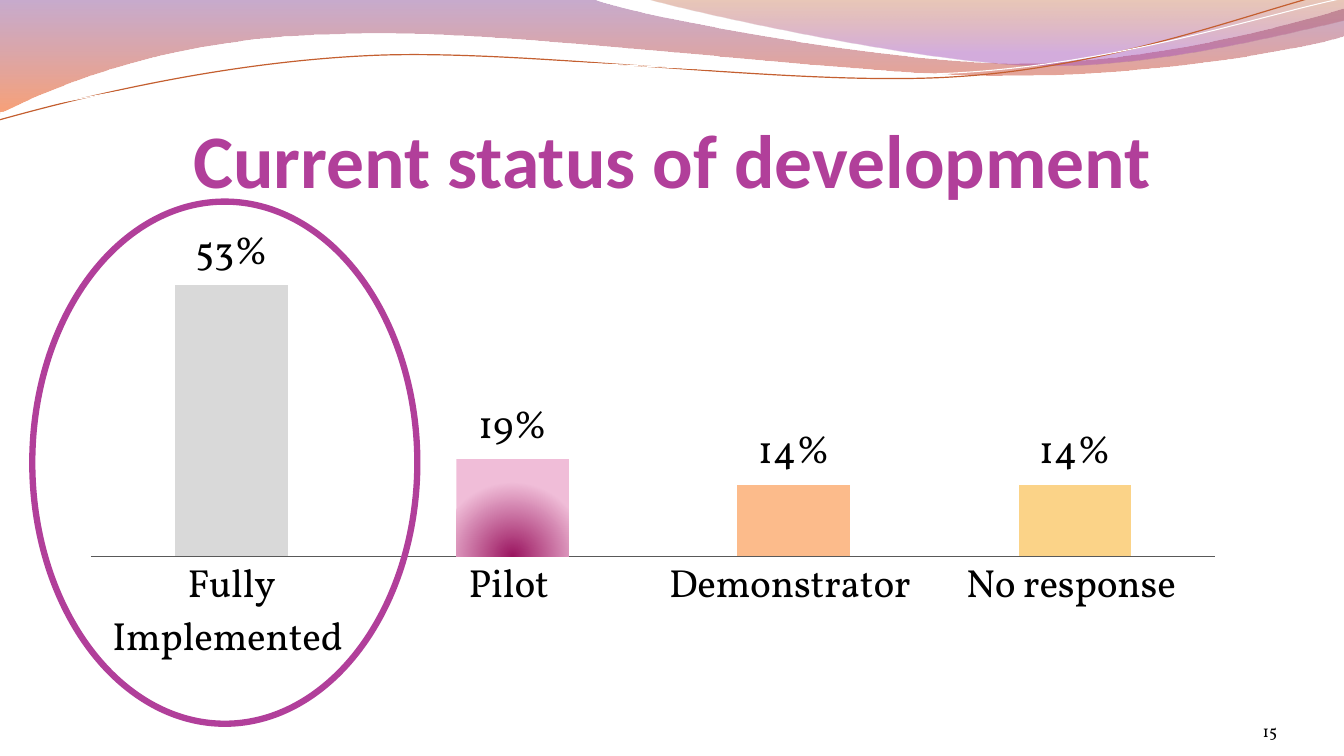
from lxml import etree
from pptx import Presentation
from pptx.chart.data import CategoryChartData
from pptx.dml.color import RGBColor as RGB
from pptx.enum.chart import XL_CHART_TYPE as CT, XL_LABEL_POSITION as LP, XL_TICK_LABEL_POSITION as TLP, XL_TICK_MARK as TM
from pptx.enum.shapes import MSO_SHAPE as SHAPE
from pptx.enum.text import MSO_ANCHOR as ANCHOR, PP_ALIGN as ALIGN
from pptx.oxml import parse_xml
from pptx.oxml.ns import qn
from pptx.util import Inches, Pt

COLS, ROWS = 40 / 3, 7.5
COLORS = {
    "plum": "B13F9A", "black": "000000", "white": "FFFFFF", "axis": "595959",
    "violet": "834591", "orange": "F35307", "rust": "B74915", "lilac": "A14BB4",
    "copper": "C45F30", "gray": "D9D9D9", "berry": "9B1560", "pink": "F0BDD8",
    "peach": "FCBB8B", "sand": "FBD388",
}
A_NS = "http://schemas.openxmlformats.org/drawingml/2006/main"
C_NS = "http://schemas.openxmlformats.org/drawingml/2006/chart"
DOWN = '<a:lin ang="5400000" scaled="0"/>'
FROM_BOTTOM = '<a:path path="circle"><a:fillToRect l="50000" t="100000" r="50000"/></a:path>'

WAVE_LEFT = [
    (0, 0), (5.87, -0.01), (6.34, 0.17, 8.85, 0.63, 10.11, 0.63),
    (11.38, 0.63, 12.78, 0.26, 13.33, 0.09), (13.35, 0.36),
    (13.11, 0.44, 11.6, 0.76, 9.94, 0.75), (8.29, 0.75, 5.09, 0.28, 3.43, 0.34),
    (1.72, 0.36, 0.61, 0.83, -0.01, 1.13),
]
WAVE_RIGHT = [
    (6.39, -0.01), (6.79, 0.11, 9.09, 0.62, 10.25, 0.65),
    (11.41, 0.69, 12.82, 0.32, 13.33, 0.21), (13.33, 0),
]
COPPER_LINE = [
    (-0.01, 1.19), (0.64, 1.01, 2.11, 0.62, 3.69, 0.55),
    (5.27, 0.48, 7.9, 0.87, 9.5, 0.76), (11.1, 0.66, 12.52, 0.08, 13.31, -0.1),
]
WHITE_LINE = [
    (0, 1.12), (0.63, 1.03, 2.18, 0.66, 3.78, 0.59),
    (5.37, 0.53, 7.96, 0.82, 9.55, 0.72), (11.15, 0.62, 12.55, 0.14, 13.34, -0.02),
]


def rgb(name):
    """Return the named colour."""
    return RGB.from_string(COLORS[name])


def set_gradient(spPr, stops, shading):
    """Give shape properties a gradient of (position, colour, opacity) stops."""
    for tag in ("a:solidFill", "a:gradFill", "a:noFill"):
        for old in spPr.findall(qn(tag)):
            spPr.remove(old)
    gs = "".join(
        f'<a:gs pos="{pos * 1000}"><a:srgbClr val="{COLORS[c]}">'
        f'<a:alpha val="{alpha * 1000}"/></a:srgbClr></a:gs>' for pos, c, alpha in stops)
    grad = parse_xml(f'<a:gradFill xmlns:a="{A_NS}" rotWithShape="1">'
                     f'<a:gsLst>{gs}</a:gsLst>{shading}</a:gradFill>')
    geom = spPr.find(qn("a:custGeom"))
    spPr.insert(0 if geom is None else spPr.index(geom) + 1, grad)


def write(tf, text, font="Vollkorn", size=12, color="black", bold=False,
          align=ALIGN.LEFT, spacing=1.0):
    """Write one formatted paragraph into a text frame."""
    p = tf.paragraphs[0]
    p.alignment, p.line_spacing = align, spacing
    r = p.add_run()
    r.text = text
    r.font.name, r.font.size, r.font.bold = font, Pt(size), bold
    r.font.color.rgb = rgb(color)


class Deck:
    """Holds the grid and the current slide."""

    def __init__(self):
        """Start a presentation with one blank slide."""
        self.prs = Presentation()
        self.prs.slide_width, self.prs.slide_height = Inches(COLS), Inches(ROWS)
        self.s = self.prs.slides.add_slide(self.prs.slide_layouts[6])

    def at(self, *lengths):
        """Convert alternating columns and rows to slide lengths."""
        units = (self.prs.slide_width / COLS, self.prs.slide_height / ROWS)
        return [round(n * units[i % 2]) for i, n in enumerate(lengths)]

    def wave(self, outline, stops=None, line=None, width=0):
        """Draw a filled wave or an open line from points and cubic curves."""
        segs = [self.at(*seg) for seg in outline]
        fb = self.s.shapes.build_freeform(*segs[0], scale=1.0)
        fb.add_line_segments([seg[-2:] for seg in segs[1:]], close=stops is not None)
        sp = fb.convert_to_shape()
        sp.shadow.inherit = False
        for step, seg in zip(list(sp._element.iter(qn("a:lnTo"))), segs[1:]):
            if len(seg) == 6:
                curve = etree.Element(qn("a:cubicBezTo"))
                for x, y in zip(seg[::2], seg[1::2]):
                    pt = etree.SubElement(curve, qn("a:pt"))
                    pt.set("x", str(x - sp.left))
                    pt.set("y", str(y - sp.top))
                step.getparent().replace(step, curve)
        if stops:
            sp.line.fill.background()
            set_gradient(sp._element.spPr, stops, DOWN)
        else:
            sp.fill.background()
            sp.line.color.rgb, sp.line.width = rgb(line), Pt(width)

    def text(self, box, text, top=0, **fmt):
        """Add a bottom-anchored text box."""
        tf = self.s.shapes.add_textbox(*self.at(*box)).text_frame
        tf.word_wrap, tf.vertical_anchor = True, ANCHOR.BOTTOM
        tf.margin_left = tf.margin_right = tf.margin_bottom = 0
        tf.margin_top = Inches(top)
        write(tf, text, **fmt)

    def ring(self, box, color, width):
        """Add an unfilled ellipse."""
        sp = self.s.shapes.add_shape(SHAPE.OVAL, *self.at(*box))
        sp.shadow.inherit = False
        sp.fill.background()
        sp.line.color.rgb, sp.line.width = rgb(color), Pt(width)

    def columns(self, box, shares, colors, inner):
        """Add a column chart with one colour per category."""
        data = CategoryChartData(number_format="0%")
        data.categories = list(shares)
        data.add_series("Series 1", shares.values())
        chart = self.s.shapes.add_chart(CT.COLUMN_CLUSTERED, *self.at(*box), data).chart
        chart.has_legend = chart.has_title = False
        chart.font.name, chart.font.size = "Vollkorn", Pt(28)
        chart.font.color.rgb = rgb("black")
        val, cat = chart.value_axis, chart.category_axis
        val.minimum_scale, val.maximum_scale = 0, 0.6
        val.has_major_gridlines = val.visible = False
        cat.major_tick_mark = cat.minor_tick_mark = TM.NONE
        cat.tick_label_position = TLP.NEXT_TO_AXIS
        cat.format.line.color.rgb, cat.format.line.width = rgb("axis"), Pt(0.75)
        plot = chart.plots[0]
        plot.gap_width, plot.overlap, plot.vary_by_categories = 150, -25, False
        plot.has_data_labels = True
        labels = plot.data_labels
        labels.show_value, labels.position = True, LP.OUTSIDE_END
        labels.number_format, labels.number_format_is_linked = "0%", False
        for i, color in enumerate(colors):
            fmt = plot.series[0].points[i].format
            fmt.line.fill.background()
            if isinstance(color, str):
                fmt.fill.solid()
                fmt.fill.fore_color.rgb = rgb(color)
            else:
                spPr = plot.series[0]._element.findall(qn("c:dPt"))[i].find(qn("c:spPr"))
                set_gradient(spPr, color, FROM_BOTTOM)
        area = chart._chartSpace.chart.plotArea
        for old in area.findall(qn("c:layout")):
            area.remove(old)
        layout = etree.Element(qn("c:layout"), nsmap={"c": C_NS})
        manual = etree.SubElement(layout, qn("c:manualLayout"))
        settings = [("layoutTarget", "inner"), ("xMode", "edge"), ("yMode", "edge")]
        for tag, value in settings + list(zip("xywh", inner)):
            etree.SubElement(manual, qn(f"c:{tag}")).set("val", str(value))
        area.insert(0, layout)


def main():
    """Build the development status slide."""
    deck = Deck()
    deck.wave(WAVE_LEFT, stops=[(0, "violet", 45), (100, "orange", 55)])
    deck.wave(WAVE_RIGHT, stops=[(0, "rust", 30), (80, "lilac", 45)])
    deck.wave(COPPER_LINE, line="copper", width=0.85)
    deck.wave(WHITE_LINE, line="white", width=0.75)
    deck.text((0.67, 0.77, 12, 1.25), "Current status of development", top=0.05,
              font="Calibri", size=54, color="plum", bold=True, align=ALIGN.CENTER, spacing=1.15)
    deck.text((11.56, 6.95, 1.11, 0.4), "15", align=ALIGN.RIGHT)
    shares = {"Fully Implemented ": 0.53, "Pilot ": 0.19, "Demonstrator ": 0.14, "No response ": 0.14}
    pilot = [(0, "berry", 100), (100, "pink", 100)]
    deck.columns((0.67, 2.25, 11.62, 4.42), shares, ["gray", pilot, "peach", "sand"],
                 inner=(0.02, 0.05, 0.96, 0.69))
    deck.ring((0.32, 2, 3.82, 5.18), "plum", 4.5)
    deck.prs.save("out.pptx")


if __name__ == "__main__":
    main()
